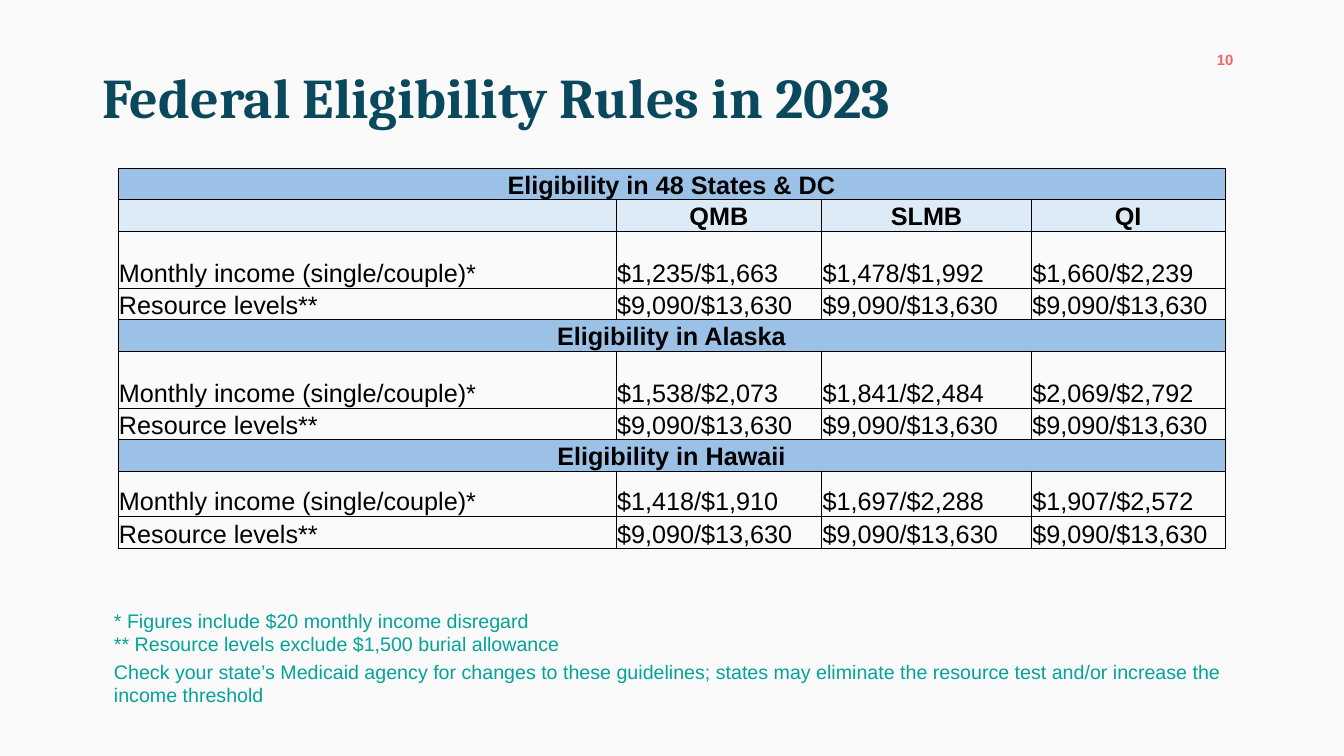
from dataclasses import dataclass
from lxml.etree import SubElement
from pptx import Presentation
from pptx.dml.color import RGBColor as Rgb
from pptx.enum.text import MSO_ANCHOR as Anchor, MSO_AUTO_SIZE as AutoSize, PP_ALIGN as Align
from pptx.oxml.ns import qn
from pptx.util import Inches, Pt


@dataclass(frozen=True)
class Theme:
    background: str = "FAFAFA"
    heading: str = "0A495D"
    note: str = "04A299"
    number: str = "F76466"
    ink: str = "000000"
    band: str = "9BC2E6"
    programs: str = "DDEBF7"
    heading_font: str = "Cambria"
    body_font: str = "Arial"
    heading_size: float = 40
    table_size: float = 18
    note_size: float = 14
    number_size: float = 10.6
    border: float = 0.5


theme = Theme()


def style_runs(paragraph, font, size, color, bold=False):
    for run in paragraph.runs:
        run.font.name = font
        run.font.size = Pt(size)
        run.font.bold = bold
        run.font.color.rgb = Rgb.from_string(color)


def place(shape, left, top, width, height):
    shape.left, shape.top = Inches(left), Inches(top)
    shape.width, shape.height = Inches(width), Inches(height)


deck = Presentation()
deck.slide_width, deck.slide_height = Inches(13.33), Inches(7.5)
slide = deck.slides.add_slide(deck.slide_layouts[1])
slide.background.fill.solid()
slide.background.fill.fore_color.rgb = Rgb.from_string(theme.background)

heading = slide.shapes.title
place(heading, 0.92, 0, 9.98, 2)
heading.text_frame.text = "Federal Eligibility Rules in 2023"
heading.text_frame.auto_size = AutoSize.NONE
heading.text_frame.vertical_anchor = Anchor.MIDDLE
heading_line = heading.text_frame.paragraphs[0]
heading_line.alignment = Align.LEFT
heading_line.line_spacing = 0.9
style_runs(heading_line, theme.heading_font, theme.heading_size, theme.heading, True)

page_number = slide.shapes.add_textbox(Inches(11.93), Inches(0.44), Inches(0.44), Inches(0.37))
number_frame = page_number.text_frame
number_frame.word_wrap = True
number_frame.margin_left = number_frame.margin_right = Inches(0.11)
number_frame.margin_top = number_frame.margin_bottom = Inches(0.06)
number_frame.text = "10"
number_frame.paragraphs[0].alignment = Align.CENTER
style_runs(number_frame.paragraphs[0], theme.body_font, theme.number_size, theme.number, True)

regions = [
    ("Eligibility in 48 States & DC", ["$1,235/$1,663", "$1,478/$1,992", "$1,660/$2,239"]),
    ("Eligibility in Alaska", ["$1,538/$2,073", "$1,841/$2,484", "$2,069/$2,792"]),
    ("Eligibility in Hawaii", ["$1,418/$1,910", "$1,697/$2,288", "$1,907/$2,572"]),
]
rows = []
for region, incomes in regions:
    rows.append(("band", [region, "", "", ""]))
    if len(rows) == 1:
        rows.append(("programs", ["", "QMB", "SLMB", "QI"]))
    rows.append(("figures", ["Monthly income (single/couple)*", *incomes]))
    rows.append(("figures", ["Resource levels**"] + ["$9,090/$13,630"] * 3))

column_widths = [4.94, 2.04, 2.08, 1.92]
row_heights = [0.29, 0.29, 0.57, 0.29, 0.29, 0.57, 0.29, 0.29, 0.45, 0.32]
row_fills = {"band": theme.band, "programs": theme.programs}
eligibility = slide.shapes.add_table(
    len(rows), len(column_widths), Inches(1.17), Inches(1.67),
    Inches(sum(column_widths)), Inches(sum(row_heights))).table
for column, width in zip(eligibility.columns, column_widths):
    column.width = Inches(width)

for row_index, ((kind, texts), height) in enumerate(zip(rows, row_heights)):
    eligibility.rows[row_index].height = Inches(height)
    for column_index, text in enumerate(texts):
        cell = eligibility.cell(row_index, column_index)
        cell.text = text
        cell.vertical_anchor = Anchor.BOTTOM
        cell.margin_left = cell.margin_right = cell.margin_top = Inches(0.01)
        cell.margin_bottom = 0
        cell_line = cell.text_frame.paragraphs[0]
        cell_line.alignment = Align.LEFT if kind == "figures" else Align.CENTER
        style_runs(cell_line, theme.body_font, theme.table_size, theme.ink, kind != "figures")
        properties = cell._tc.get_or_add_tcPr()
        for side in ("lnL", "lnR", "lnT", "lnB"):
            border = SubElement(properties, qn(f"a:{side}"), w=str(Pt(theme.border)))
            SubElement(SubElement(border, qn("a:solidFill")), qn("a:srgbClr"), val=theme.ink)
        if kind in row_fills:
            cell.fill.solid()
            cell.fill.fore_color.rgb = Rgb.from_string(row_fills[kind])
        else:
            cell.fill.background()
    if kind == "band":
        eligibility.cell(row_index, 0).merge(eligibility.cell(row_index, len(texts) - 1))

notes = [
    "* Figures include $20 monthly income disregard\n"
    "** Resource levels exclude $1,500 burial allowance",
    "Check your state’s Medicaid agency for changes to these guidelines; "
    "states may eliminate the resource test and/or increase the income threshold",
]
footnotes = slide.placeholders[1]
place(footnotes, 1.03, 5.99, 11.21, 0.92)
footnotes.text_frame.auto_size = AutoSize.NONE
for index, note in enumerate(notes):
    note_line = footnotes.text_frame.add_paragraph() if index else footnotes.text_frame.paragraphs[0]
    note_line.text = note
    indents = note_line._p.get_or_add_pPr()
    indents.set("marL", "0")
    indents.set("indent", "0")
    SubElement(indents, qn("a:buNone"))
    note_line.space_before = Pt(0.2 * theme.note_size if index else 0)
    style_runs(note_line, theme.body_font, theme.note_size, theme.note)

deck.save("out.pptx")
